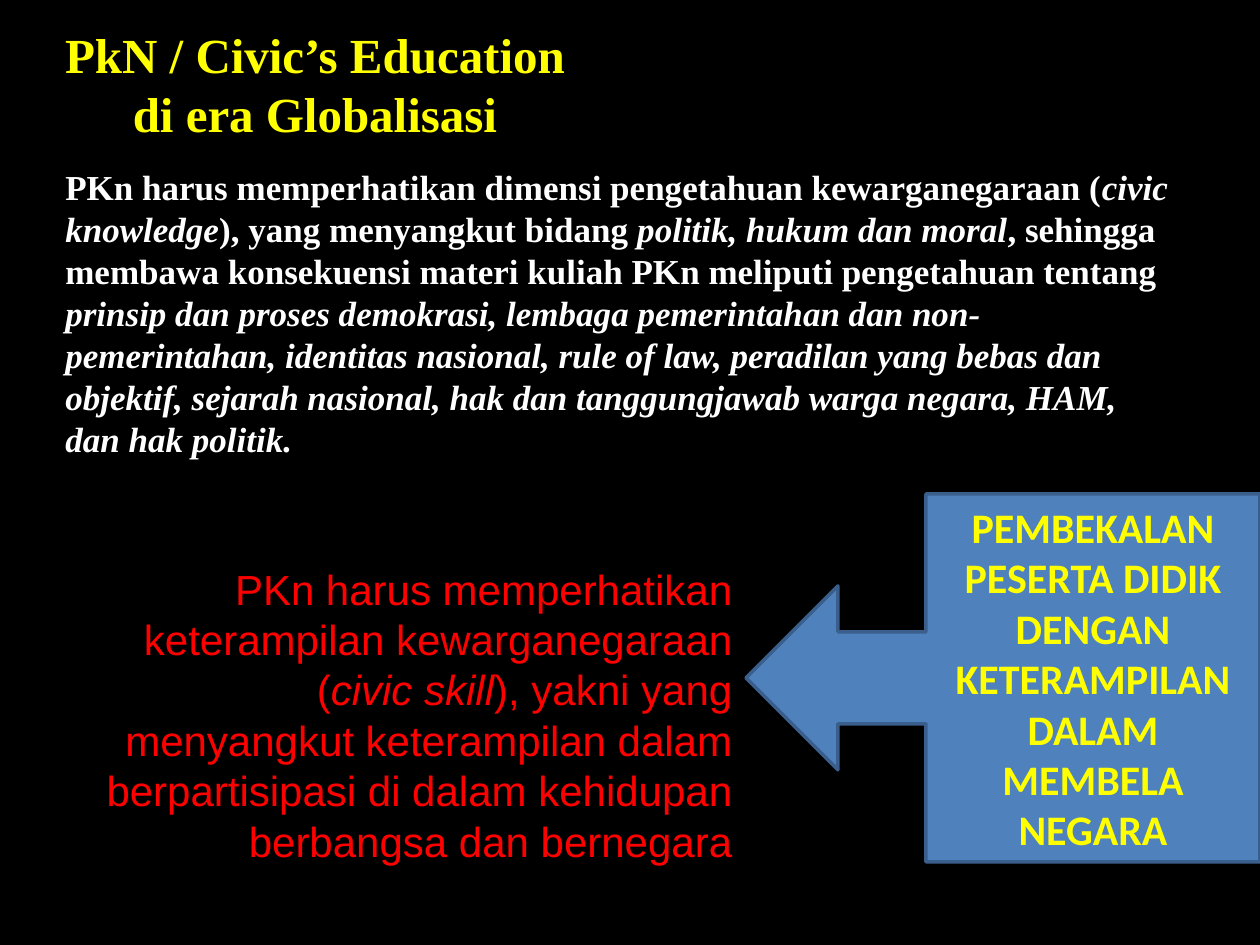
from pptx import Presentation
from pptx.dml.color import RGBColor
from pptx.enum.shapes import MSO_SHAPE
from pptx.enum.text import MSO_ANCHOR, MSO_AUTO_SIZE, PP_ALIGN
from pptx.util import Inches, Pt

BLACK = RGBColor(0x00, 0x00, 0x00)
WHITE = RGBColor(0xFF, 0xFF, 0xFF)
YELLOW = RGBColor(0xFF, 0xFF, 0x00)
RED = RGBColor(0xFF, 0x00, 0x00)
BLUE = RGBColor(0x4F, 0x81, 0xBD)
DARK_BLUE = RGBColor(0x3A, 0x5F, 0x8C)
LEFT, CENTER, RIGHT = PP_ALIGN.LEFT, PP_ALIGN.CENTER, PP_ALIGN.RIGHT
TOP, MIDDLE = MSO_ANCHOR.TOP, MSO_ANCHOR.MIDDLE
ROUNDED, CALLOUT = MSO_SHAPE.ROUNDED_RECTANGLE, MSO_SHAPE.LEFT_ARROW_CALLOUT
GROW = MSO_AUTO_SIZE.SHAPE_TO_FIT_TEXT


def write(box, *texts, font, size, color, bold=False, align=LEFT, anchor=TOP):
    frame = box.text_frame
    frame.word_wrap = True
    frame.vertical_anchor = anchor
    para = frame.paragraphs[0]
    para.alignment = align
    for index, text in enumerate(texts):
        span = para.add_run()
        span.text = text
        span.font.name = font
        span.font.size = Pt(size)
        span.font.bold = bold
        span.font.italic = index % 2 == 1
        span.font.color.rgb = color


deck = Presentation()
deck.slide_width = Inches(10)
deck.slide_height = Inches(7.5)
page = deck.slides.add_slide(deck.slide_layouts[6])
page.background.fill.solid()
page.background.fill.fore_color.rgb = BLACK

title = page.shapes.add_shape(ROUNDED, Inches(0.25), Inches(0), Inches(4.5), Inches(1.33))
title.fill.background()
title.line.color.rgb = BLACK
write(title, "PkN / Civic’s Education di era Globalisasi",
      font="Times New Roman", size=28, color=YELLOW, bold=True, align=CENTER, anchor=MIDDLE)

knowledge = page.shapes.add_textbox(Inches(0.42), Inches(1.25), Inches(9), Inches(2.46))
knowledge.text_frame.auto_size = GROW
write(knowledge,
      "PKn harus memperhatikan dimensi pengetahuan kewarganegaraan (",
      "civic knowledge",
      "), yang menyangkut bidang ",
      "politik, hukum dan moral",
      ", sehingga membawa konsekuensi materi kuliah PKn meliputi pengetahuan tentang ",
      "prinsip dan proses demokrasi, lembaga pemerintahan dan non-pemerintahan, "
      "identitas nasional, rule of law, peradilan yang bebas dan objektif, sejarah nasional, "
      "hak dan tanggungjawab warga negara, HAM, dan hak politik.",
      font="Times New Roman", size=20, color=WHITE, bold=True, anchor=MIDDLE)

skill = page.shapes.add_textbox(Inches(0.58), Inches(4.42), Inches(5.33), Inches(2.52))
skill.text_frame.auto_size = GROW
write(skill,
      "PKn harus memperhatikan keterampilan kewarganegaraan (",
      "civic skill",
      "), yakni yang menyangkut keterampilan dalam berpartisipasi "
      "di dalam kehidupan berbangsa dan bernegara",
      font="Arial", size=24, color=RED, align=RIGHT)

callout = page.shapes.add_shape(CALLOUT, Inches(5.92), Inches(3.92), Inches(4.08), Inches(2.92))
callout.fill.solid()
callout.fill.fore_color.rgb = BLUE
callout.line.color.rgb = DARK_BLUE
write(callout, "PEMBEKALAN PESERTA DIDIK DENGAN KETERAMPILAN DALAM MEMBELA NEGARA",
      font="Calibri", size=24, color=YELLOW, bold=True, align=CENTER, anchor=MIDDLE)

for shape in (title, callout):
    shape.line.width = Pt(2)
    shape.shadow.inherit = False

deck.save("out.pptx")
